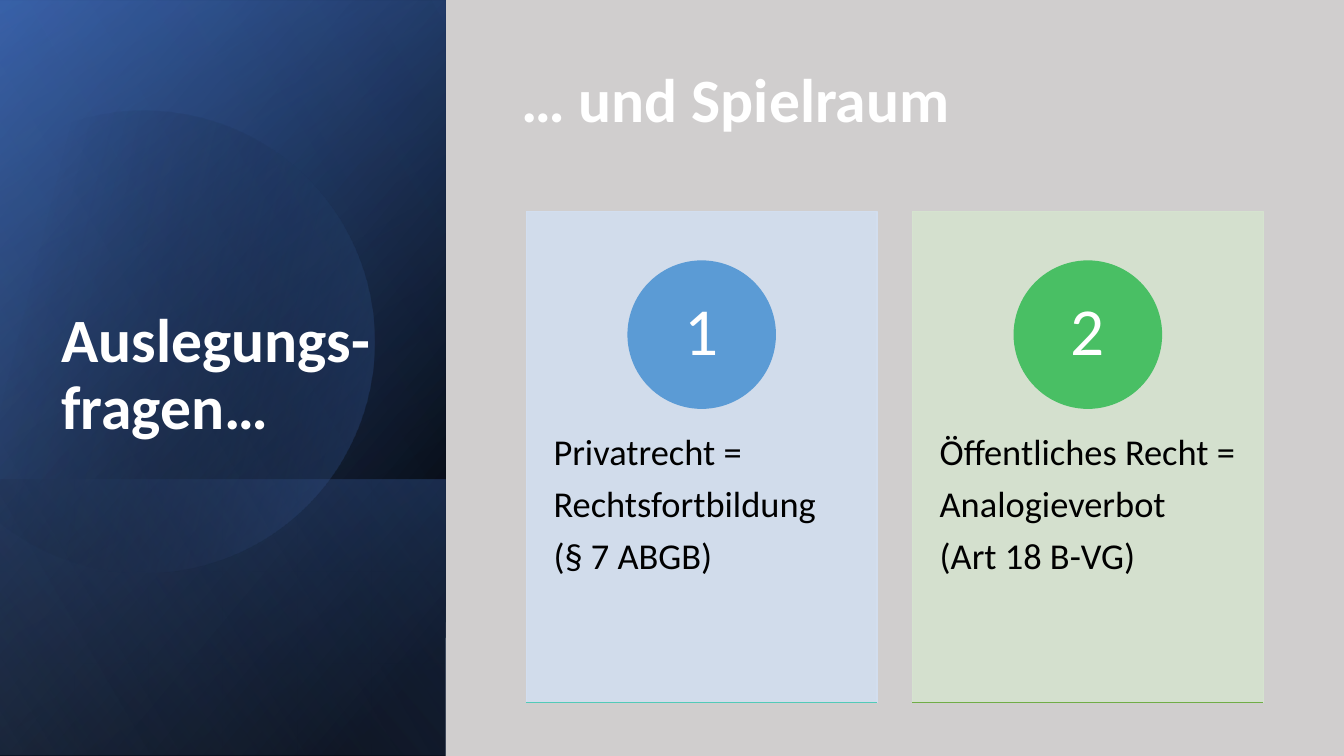
from math import cos, radians, sin

from lxml import etree
from pptx import Presentation
from pptx.dml.color import RGBColor
from pptx.enum.shapes import MSO_CONNECTOR, MSO_SHAPE
from pptx.enum.text import MSO_ANCHOR, PP_ALIGN
from pptx.oxml.ns import qn
from pptx.util import Inches, Pt

RECT, OVAL = MSO_SHAPE.RECTANGLE, MSO_SHAPE.OVAL
LINE = MSO_CONNECTOR.STRAIGHT
TOP, MIDDLE, BOTTOM = MSO_ANCHOR.TOP, MSO_ANCHOR.MIDDLE, MSO_ANCHOR.BOTTOM
LEFT, CENTER = PP_ALIGN.LEFT, PP_ALIGN.CENTER


class Theme:
    font = "Calibri"
    back, white, black = "D0CECE", "FFFFFF", "000000"
    navy, blue, pale = "2F5597", "4472C4", "8FAADC"
    head, body, digit = 44, 26, 48


# Side panels: left, top, width, height, gradient angle, (position, colour, alpha)
PANELS = [
    (-1.54, 1.54, 7.5, 4.42, 50, [(8, Theme.black, 100), (100, Theme.navy, 100)]),
    (-1.54, 1.55, 7.5, 4.42, 30, [(0, Theme.black, 0), (99, Theme.blue, 46)]),
    (0.84, 3.92, 2.74, 4.42, 130, [(2, Theme.blue, 29), (100, Theme.black, 30)]),
]
SHEEN = (-1.54, 1.53, 7.5, 4.42, 120, [(0, Theme.black, 0), (99, Theme.pale, 11)])
GLOW = [(29, Theme.black, 0), (100, Theme.blue, 43)]

# Cards: fill, disc colour, base line colour, text lines
CARDS = [
    ("D2DEEF", "5B9BD5", "52CAB8",
     ["Privatrecht =", "Rechtsfortbildung", "(§ 7 ABGB)"]),
    ("D5E3CF", "49BF64", "70AD47",
     ["Öffentliches Recht =", "Analogieverbot", "(Art 18 B-VG)"]),
]


def rgb(tone):
    return RGBColor.from_string(tone)


def box(*sizes):
    return [Inches(size) for size in sizes]


def add_color(parent, tone, alpha):
    color = etree.SubElement(parent, qn("a:srgbClr"), val=tone)
    etree.SubElement(color, qn("a:alpha"), val=str(alpha * 1000))


def add_shape(slide, kind, area, tone, edge=False, alpha=100):
    shape = slide.shapes.add_shape(kind, *box(*area))
    shape.shadow.inherit = False
    shape.fill.solid()
    shape.fill.fore_color.rgb = rgb(tone)
    if alpha < 100:
        fill = shape.fill._xPr.find(qn("a:solidFill"))
        fill.clear()
        add_color(fill, tone, alpha)
    if edge:
        shape.line.color.rgb = rgb(tone)
        shape.line.width = Pt(1)
    else:
        shape.line.fill.background()
    return shape


def set_fade(shape, angle, stops):
    shape.fill.gradient()
    grad = shape.fill._xPr.find(qn("a:gradFill"))
    for child in list(grad):
        grad.remove(child)
    steps = etree.SubElement(grad, qn("a:gsLst"))
    for place, tone, alpha in stops:
        stop = etree.SubElement(steps, qn("a:gs"), pos=str(place * 1000))
        add_color(stop, tone, alpha)
    etree.SubElement(grad, qn("a:lin"), ang=str(angle * 60000), scaled="0")


def add_panel(slide, left, top, width, height, angle, stops):
    panel = add_shape(slide, RECT, (left, top, width, height), Theme.navy)
    panel.rotation = 90
    panel._element.spPr.find(qn("a:xfrm")).set("flipH", "1")
    set_fade(panel, angle, stops)


def add_glow(slide):
    # Disc with its left side cut off, turned so that the cut stands upright
    mid_x, mid_y, radius = 1.42, 3.345, 2.29
    first, last, count = -117.5, 149.7, 90
    turns = [radians(first + (last - first) * i / count) for i in range(count + 1)]
    points = [(Inches(mid_x + radius * cos(t)), Inches(mid_y + radius * sin(t)))
              for t in turns]
    outline = slide.shapes.build_freeform(*points[0])
    outline.add_line_segments(points[1:], close=True)
    glow = outline.convert_to_shape()
    glow.shadow.inherit = False
    glow.line.fill.background()
    glow.rotation = 343.9
    set_fade(glow, 30, GLOW)


def add_text(slide, area, lines, size, tone, bold=False, anchor=TOP,
             align=LEFT, inset=(0.1, 0.05), pitch=0.9, after=0):
    frame = slide.shapes.add_textbox(*box(*area)).text_frame
    frame.word_wrap = True
    frame.vertical_anchor = anchor
    frame.margin_left = frame.margin_right = Inches(inset[0])
    frame.margin_top = frame.margin_bottom = Inches(inset[1])
    frame.text = "\n".join(lines)
    for para in frame.paragraphs:
        para.alignment = align
        para.line_spacing = pitch
        para.space_after = Pt(after)
        para.font.name = Theme.font
        para.font.size = Pt(size)
        para.font.bold = bold
        para.font.color.rgb = rgb(tone)


def add_rule(slide, left, top, width, tone):
    rule = slide.shapes.add_connector(LINE, *box(left, top, left + width, top))
    rule.line.color.rgb = rgb(tone)
    rule.line.width = Pt(1)
    etree.SubElement(rule._element.spPr, qn("a:effectLst"))


def add_card(slide, index, tone, disc, base, lines):
    left, top, width, height = 5.22 + 3.83 * index, 2.1, 3.48, 4.87
    add_shape(slide, RECT, (left, top, width, height), tone, True, 90)
    add_text(slide, (left, 3.95, width, 2.92), lines, Theme.body, Theme.black,
             inset=(0.27, 0.36), after=9.1)
    add_shape(slide, OVAL, (left + 1.01, 2.59, 1.46, 1.46), disc, True)
    add_text(slide, (left + 1.22, 2.8, 1.03, 1.03), [str(index + 1)],
             Theme.digit, Theme.white, anchor=MIDDLE, align=CENTER,
             inset=(0.11, 0.01))
    add_rule(slide, left, top + height, width, base)


def main():
    deck = Presentation()
    deck.slide_width, deck.slide_height = box(13.33, 7.5)
    slide = deck.slides.add_slide(deck.slide_layouts[6])

    # Backdrop
    slide.background.fill.solid()
    slide.background.fill.fore_color.rgb = rgb(Theme.back)
    add_shape(slide, RECT, (0, 0, 13.33, 7.5), Theme.back)

    # Dark side panel
    for panel in PANELS:
        add_panel(slide, *panel)
    add_glow(slide)
    add_panel(slide, *SHEEN)

    # Headings
    add_text(slide, (0.51, 3.04, 3.58, 1.4), ["Auslegungs-fragen…"],
             Theme.head, Theme.white, True, BOTTOM)
    add_text(slide, (5.07, 0.56, 5.31, 0.84), ["… und Spielraum"],
             Theme.head, Theme.white, True, pitch=1.0)

    # Cards
    for index, card in enumerate(CARDS):
        add_card(slide, index, *card)

    deck.save("out.pptx")


if __name__ == "__main__":
    main()
